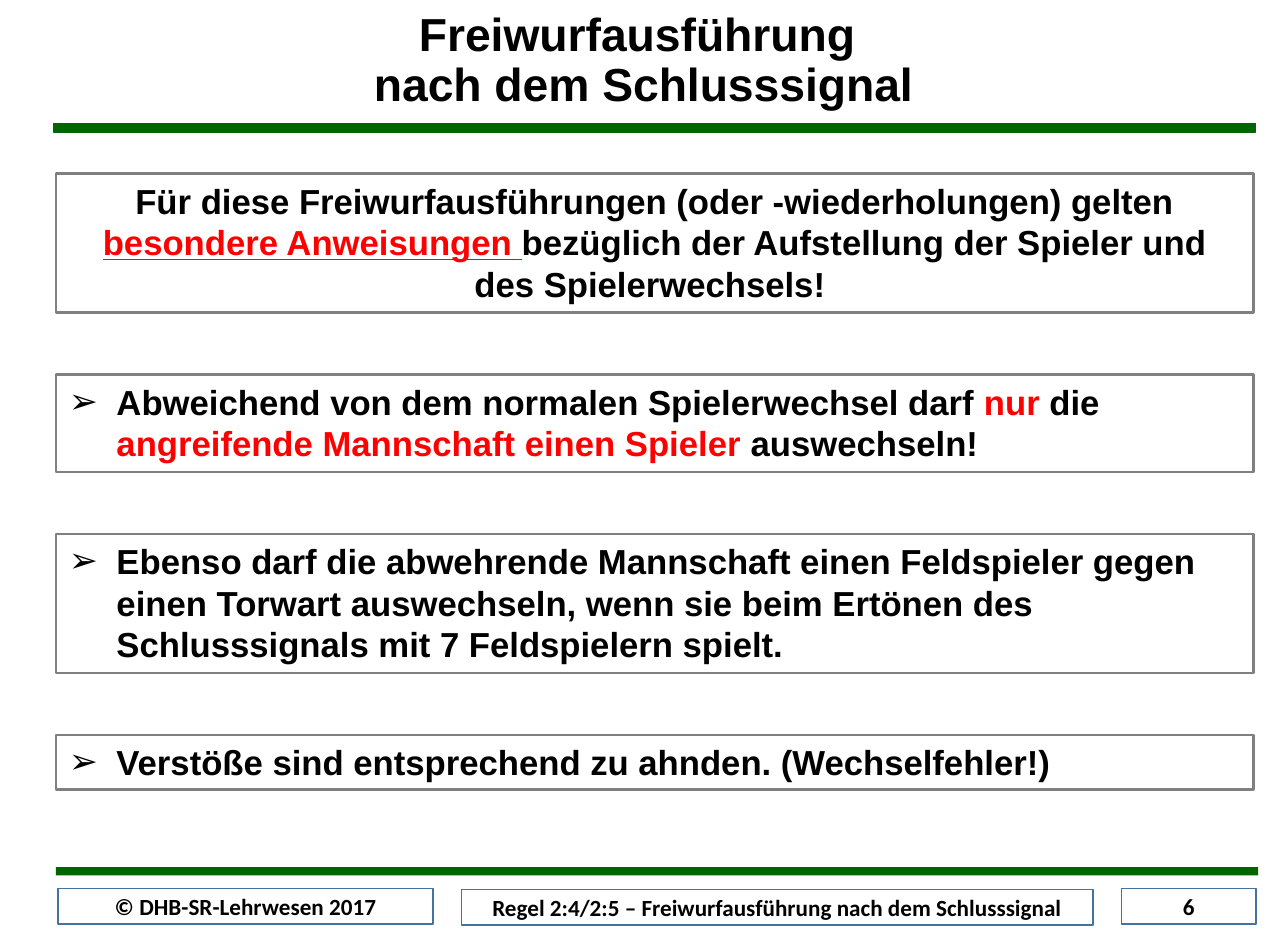
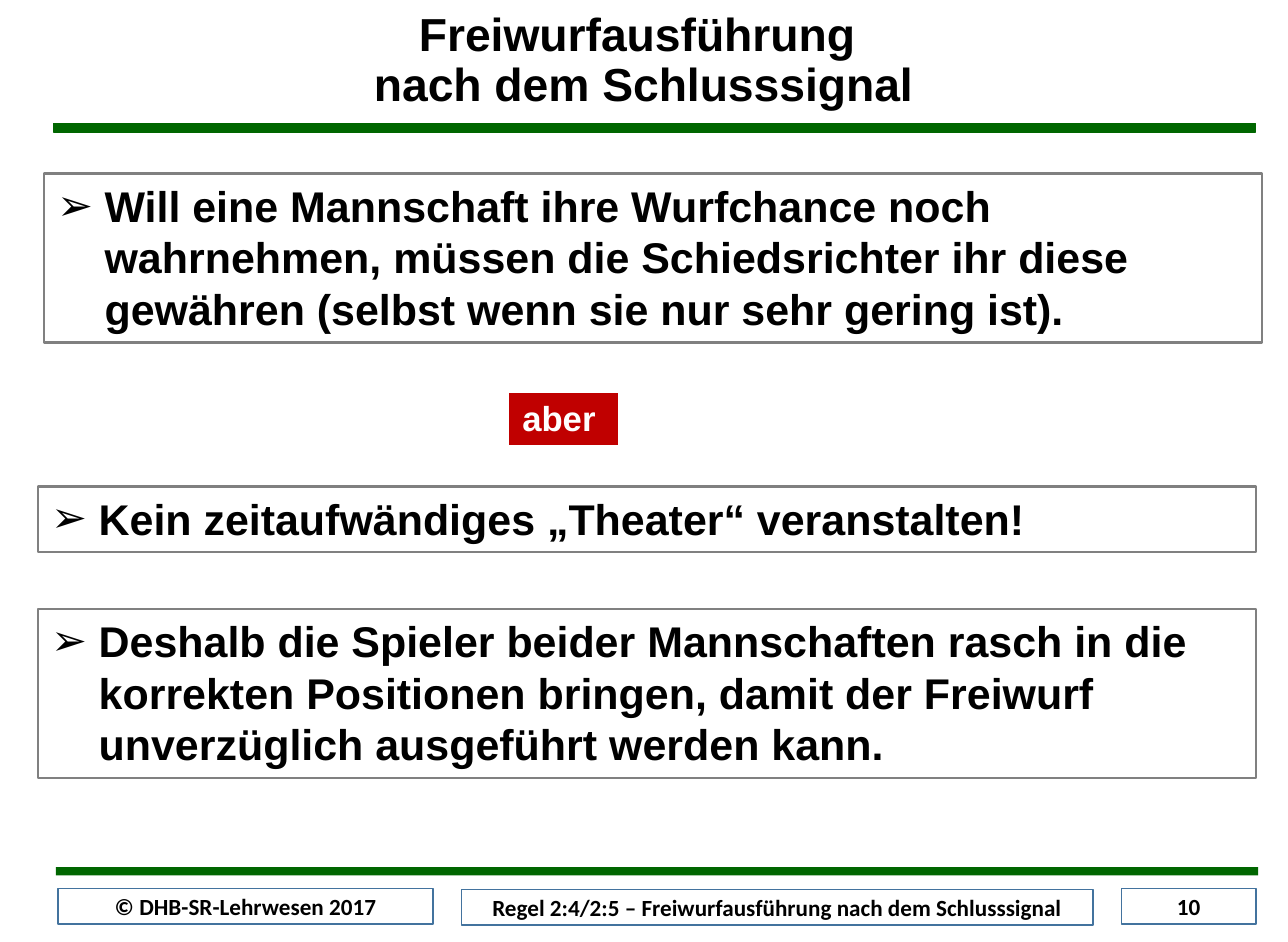
from lxml import etree
from pptx import Presentation
from pptx.dml.color import RGBColor
from pptx.enum.shapes import MSO_SHAPE
from pptx.enum.text import MSO_ANCHOR, MSO_AUTO_SIZE, PP_ALIGN
from pptx.oxml.ns import qn
from pptx.util import Inches, Pt

RECTANGLE = MSO_SHAPE.RECTANGLE
TOP, MIDDLE = MSO_ANCHOR.TOP, MSO_ANCHOR.MIDDLE
LEFT, CENTER = PP_ALIGN.LEFT, PP_ALIGN.CENTER
FIXED, GROW = MSO_AUTO_SIZE.NONE, MSO_AUTO_SIZE.SHAPE_TO_FIT_TEXT

BLACK = RGBColor(0x00, 0x00, 0x00)
WHITE = RGBColor(0xFF, 0xFF, 0xFF)
RED = RGBColor(0xFF, 0x00, 0x00)
DARK_RED = RGBColor(0xC0, 0x00, 0x00)
GREEN = RGBColor(0x00, 0x66, 0x00)
GRAY = RGBColor(0x80, 0x80, 0x80)
BLUE = RGBColor(0x43, 0x73, 0x9E)

TITLE_ONLY = 5
BODY_FONT, FOOTER_FONT = "Arial", "Calibri"
TITLE_LINES = ("Freiwurfausführung ", "nach dem Schlusssignal")
COPYRIGHT = "© DHB-SR-Lehrwesen 2017"
TOPIC = "Regel 2:4/2:5 – Freiwurfausführung nach dem Schlusssignal"


def add_rectangle(page, place, fill=None, line=None, line_width=1.5):
    box = page.shapes.add_shape(RECTANGLE, *(Inches(length) for length in place))
    box.shadow.inherit = False
    if fill is None:
        box.fill.background()
    else:
        box.fill.solid()
        box.fill.fore_color.rgb = fill
    if line is None:
        box.line.fill.background()
    else:
        box.line.color.rgb = line
        box.line.width = Pt(line_width)
    return box


def set_frame(box, side, anchor, auto_size):
    frame = box.text_frame
    frame.margin_left = frame.margin_right = Inches(side)
    frame.margin_top = frame.margin_bottom = Inches(0.05)
    frame.vertical_anchor = anchor
    frame.word_wrap = True
    frame.auto_size = auto_size
    return frame


def add_span(para, text, size, color=BLACK, underline=False, font=BODY_FONT):
    span = para.add_run()
    span.text = text
    span.font.name = font
    span.font.size = Pt(size)
    span.font.bold = True
    span.font.underline = underline
    span.font.color.rgb = color


def set_bullet(para):
    properties = para._p.get_or_add_pPr()
    properties.set("marL", str(Inches(0.4)))
    properties.set("indent", str(-Inches(0.4)))
    etree.SubElement(properties, qn("a:buFont")).set("typeface", BODY_FONT)
    etree.SubElement(properties, qn("a:buChar")).set("char", "➢")


def add_text_box(page, place, spans, size, bullet=True, fill=None, line=GRAY):
    box = add_rectangle(page, place, fill, line)
    para = set_frame(box, 0.11, TOP, GROW).paragraphs[0]
    para.alignment = LEFT if bullet else CENTER
    if bullet:
        set_bullet(para)
    for span in spans:
        add_span(para, span[0], size, *span[1:])


def add_footer_box(page, place, text):
    box = add_rectangle(page, place, WHITE, BLUE, 1)
    para = set_frame(box, 0.1, MIDDLE, FIXED).paragraphs[0]
    para.alignment = CENTER
    add_span(para, text, 14, font=FOOTER_FONT)


def set_title(page):
    title = page.shapes.title
    title.left, title.top = Inches(1.71), Inches(0.05)
    title.width, title.height = Inches(7.4), Inches(1.13)
    frame = set_frame(title, 0.1, TOP, FIXED)
    for index, text in enumerate(TITLE_LINES):
        para = frame.add_paragraph() if index else frame.paragraphs[0]
        para.alignment = CENTER
        para.line_spacing = 0.9
        add_span(para, text, 28)


def add_page(deck, number):
    page = deck.slides.add_slide(deck.slide_layouts[TITLE_ONLY])
    add_rectangle(page, (0.45, 1.04, 10.11, 0.07), GREEN, GREEN, 0.75)
    add_rectangle(page, (0.47, 7.29, 10.11, 0.07), GREEN)
    add_footer_box(page, (0.49, 7.47, 3.15, 0.3), COPYRIGHT)
    add_footer_box(page, (3.88, 7.48, 5.31, 0.3), TOPIC)
    add_footer_box(page, (9.43, 7.47, 1.13, 0.3), str(number))
    set_title(page)
    return page


def build_substitution_page(deck):
    page = add_page(deck, 6)
    boxes = (
        (1.17, False, (
            ("Für diese Freiwurfausführungen (oder -wiederholungen) gelten ",),
            ("besondere Anweisungen ", RED, True),
            ("bezüglich der Aufstellung der Spieler und des Spielerwechsels! ",),
        )),
        (0.82, True, (
            ("Abweichend von dem normalen Spielerwechsel darf ",),
            ("nur", RED),
            (" die ",),
            ("angreifende Mannschaft einen Spieler ", RED),
            ("auswechseln!",),
        )),
        (1.17, True, (
            ("Ebenso darf die abwehrende Mannschaft einen Feldspieler gegen "
             "einen Torwart auswechseln, wenn sie beim Ertönen des "
             "Schlusssignals mit 7 Feldspielern spielt.",),
        )),
        (0.46, True, (
            ("Verstöße sind entsprechend zu ahnden. (Wechselfehler!)",),
        )),
    )
    top, gap = 1.46, 0.52
    for height, bullet, spans in boxes:
        add_text_box(page, (0.47, top, 10.07, height), spans, 21, bullet)
        top += height + gap


def build_throw_chance_page(deck):
    page = add_page(deck, 10)
    boxes = (
        (0.37, 1.46, 1.42,
         "Will eine Mannschaft ihre Wurfchance noch wahrnehmen, müssen die "
         "Schiedsrichter ihr diese gewähren (selbst wenn sie nur sehr gering ist)."),
        (0.32, 4.09, 0.55, "Kein zeitaufwändiges „Theater“ veranstalten!"),
        (0.32, 5.12, 1.42,
         "Deshalb die Spieler beider Mannschaften rasch in die korrekten Positionen "
         "bringen, damit der Freiwurf unverzüglich ausgeführt werden kann."),
    )
    for left, top, height, text in boxes:
        add_text_box(page, (left, top, 10.24, height), ((text,),), 26)
    add_text_box(page, (4.27, 3.29, 0.94, 0.46), (("aber ", WHITE),), 21,
                 bullet=False, fill=DARK_RED, line=WHITE)


def main():
    deck = Presentation()
    deck.slide_width, deck.slide_height = Inches(10.83), Inches(7.92)
    build_substitution_page(deck)
    build_throw_chance_page(deck)
    deck.save("out.pptx")


if __name__ == "__main__":
    main()
